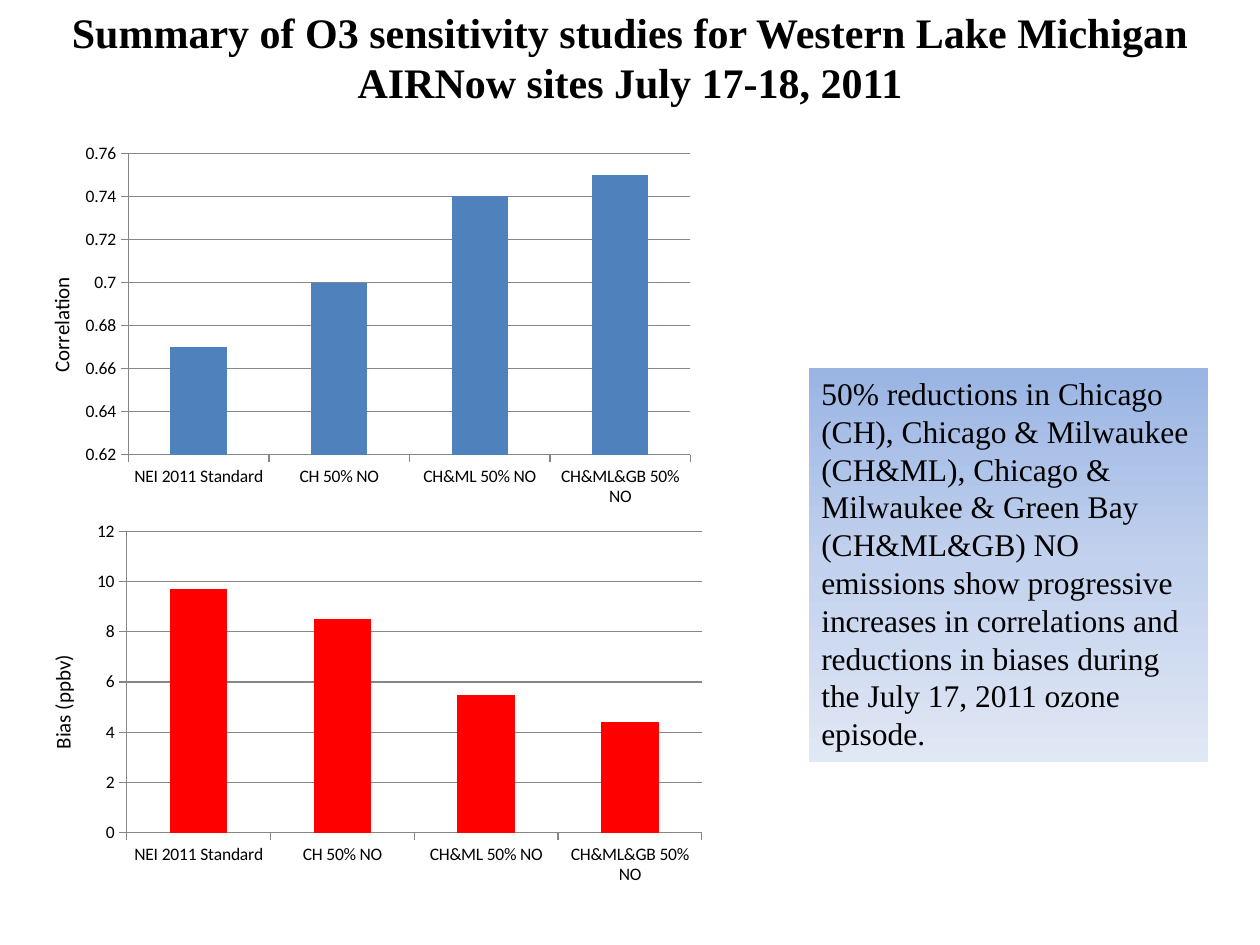
"""Build the slide summarising the Western Lake Michigan O3 sensitivity studies."""
from copy import deepcopy

from pptx import Presentation
from pptx.chart.data import CategoryChartData
from pptx.dml.color import RGBColor
from pptx.enum.chart import XL_CHART_TYPE, XL_TICK_MARK
from pptx.enum.shapes import MSO_SHAPE
from pptx.enum.text import MSO_ANCHOR, PP_ALIGN
from pptx.util import Inches, Pt

COLORS = {
    "text": "000000",
    "grid": "868686",
    "correlation": "4F81BD",
    "bias": "FF0000",
    "panel_top": "9AB5E4",
    "panel_middle": "C2D1ED",
    "panel_bottom": "E1E8F5",
}
SCENARIOS = ["NEI 2011 Standard", "CH 50% NO", "CH&ML 50% NO", "CH&ML&GB 50% NO"]


def rgb(name):
    return RGBColor.from_string(COLORS[name])


def write(shape, text, size, font_name, align=PP_ALIGN.LEFT, bold=False, wrap=True):
    frame = shape.text_frame
    frame.word_wrap = wrap
    frame.vertical_anchor = MSO_ANCHOR.TOP
    paragraph = frame.paragraphs[0]
    paragraph.text = text
    paragraph.alignment = align
    font = paragraph.font
    font.size, font.name, font.bold = Pt(size), font_name, bold
    font.color.rgb = rgb("text")


prs = Presentation()
prs.slide_width, prs.slide_height = Inches(10), Inches(7.5)
slide = prs.slides.add_slide(prs.slide_layouts[6])

measures = [
    ("correlation", (0.67, 0.7, 0.74, 0.75), 0.58, 1.08, (0.62, 0.76, 0.02)),
    ("bias", (9.7, 8.5, 5.5, 4.4), 0.67, 4.08, (0, 12, 2)),
]
for color, values, left, top, (low, high, step) in measures:
    data = CategoryChartData()
    data.categories = SCENARIOS
    data.add_series("Series 1", values)
    chart = slide.shapes.add_chart(
        XL_CHART_TYPE.COLUMN_CLUSTERED,
        Inches(left), Inches(top), Inches(5), Inches(3), data,
    ).chart
    chart.has_legend = False
    chart.has_title = False
    chart.font.size, chart.font.name = Pt(10), "Calibri"
    chart.font.color.rgb = rgb("text")

    plot = chart.plots[0]
    plot.gap_width = 150
    plot.vary_by_categories = False
    bars = plot.series[0].format.fill
    bars.solid()
    bars.fore_color.rgb = rgb(color)

    value_axis = chart.value_axis
    value_axis.minimum_scale, value_axis.maximum_scale = low, high
    value_axis.major_unit = step
    value_axis.has_major_gridlines = True
    for axis in (chart.category_axis, value_axis):
        axis.major_tick_mark = XL_TICK_MARK.OUTSIDE
        axis.minor_tick_mark = XL_TICK_MARK.NONE
    for ruled in (chart.category_axis, value_axis, value_axis.major_gridlines):
        ruled.format.line.color.rgb = rgb("grid")
        ruled.format.line.width = Pt(0.75)

heading = slide.shapes.add_textbox(0, 0, Inches(10), Inches(0.91))
write(
    heading,
    "Summary of O3 sensitivity studies for Western Lake Michigan "
    "AIRNow sites July 17-18, 2011",
    24, "Times New Roman", PP_ALIGN.CENTER, bold=True,
)

for label, left, top in (("Correlation", 0, 2.42), ("Bias (ppbv)", 0.01, 5.41)):
    axis_label = slide.shapes.add_textbox(
        Inches(left), Inches(top), Inches(0.97), Inches(0.3)
    )
    axis_label.rotation = 270
    write(axis_label, label, 12, "Calibri", wrap=False)

findings = slide.shapes.add_shape(
    MSO_SHAPE.RECTANGLE, Inches(6.42), Inches(2.92), Inches(3.17), Inches(3.13)
)
findings.shadow.inherit = False
findings.line.fill.background()
findings.fill.gradient()
findings.fill.gradient_angle = 270
first_stop = findings.fill.gradient_stops[0]._gs
first_stop.addnext(deepcopy(first_stop))
panel_stops = zip(
    findings.fill.gradient_stops,
    (0, 0.5, 1),
    ("panel_top", "panel_middle", "panel_bottom"),
)
for stop, position, color in panel_stops:
    stop.position = position
    stop.color.rgb = rgb(color)
write(
    findings,
    "50% reductions in Chicago (CH), Chicago & Milwaukee (CH&ML), "
    "Chicago & Milwaukee & Green Bay (CH&ML&GB) NO emissions show progressive "
    "increases in correlations and reductions in biases during the July 17, 2011 "
    "ozone episode.",
    18, "Times New Roman",
)

prs.save("out.pptx")
